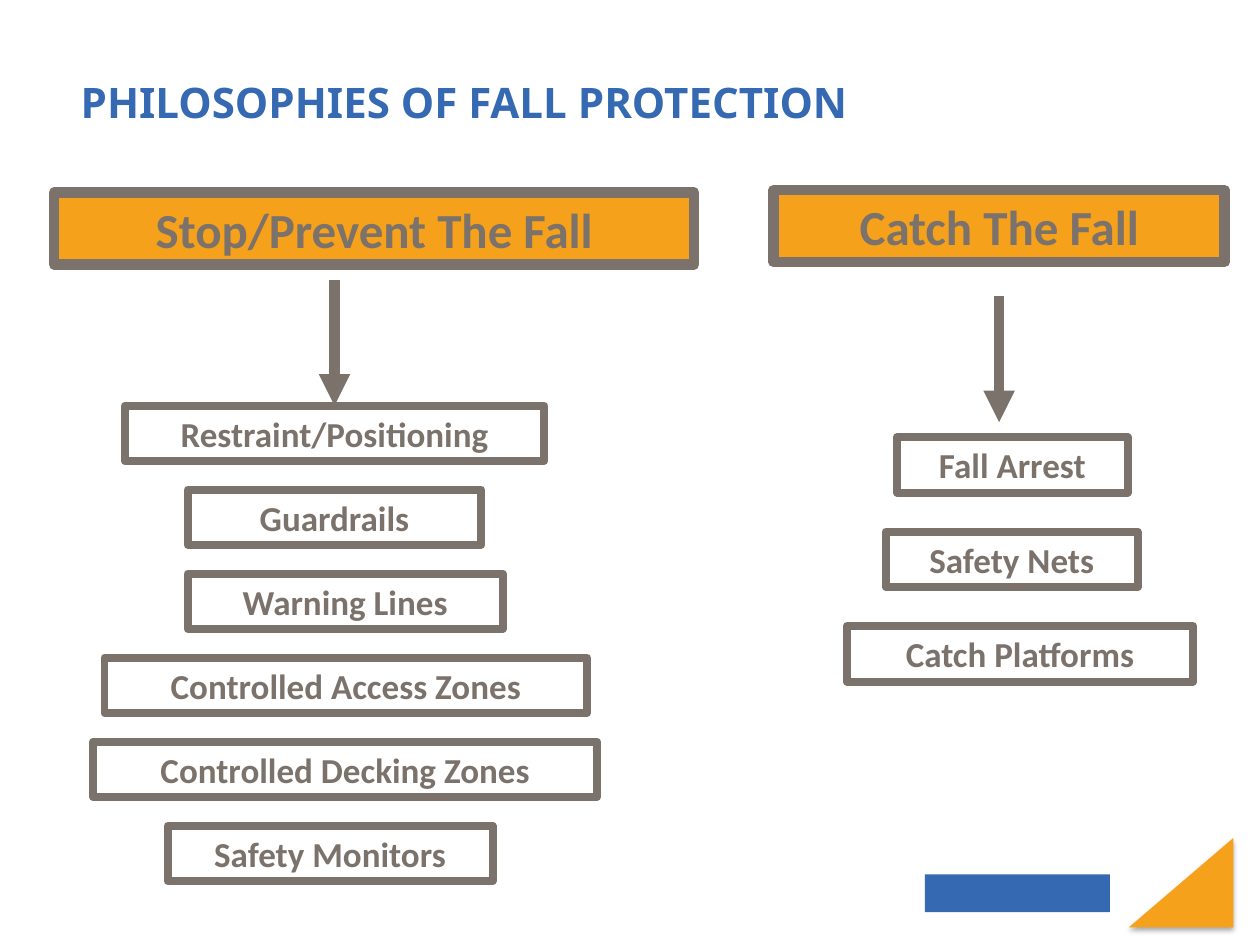
import pptx
import pptx.dml.color
import pptx.enum.shapes
import pptx.enum.text
import pptx.oxml
import pptx.oxml.ns
import pptx.util
from pptx.util import Inches

BLUE, ORANGE, GREY, WHITE = "3569B2", "F6A11C", "7B726B", "FFFFFF"
SHAPE = pptx.enum.shapes.MSO_SHAPE
ALIGN = pptx.enum.text.PP_ALIGN
ANCHOR = pptx.enum.text.MSO_ANCHOR
NS = pptx.oxml.ns.nsdecls("a")
SHADOW = (f'<a:effectLst {NS}><a:outerShdw blurRad="39370" dist="22860" dir="5400000" '
          'rotWithShape="0"><a:srgbClr val="000000"><a:alpha val="35000"/></a:srgbClr>'
          '</a:outerShdw></a:effectLst>')


def rgb(value):
    return pptx.dml.color.RGBColor.from_string(value)


class FallProtectionSlide:
    """Holds the style and the current slide, and adds each kind of element."""

    def __init__(self, prs):
        self.s = prs.slides.add_slide(prs.slide_layouts[5])
        self.item = {"name": "Calibri", "size": pptx.util.Pt(20), "bold": True}
        self.heading = {**self.item, "size": pptx.util.Pt(28)}
        self.title_font = {"name": "Noto Sans", "size": pptx.util.Pt(24), "bold": True}

    def set_text(self, sp, text, font, color, align):
        tf = sp.text_frame
        tf.word_wrap = True
        tf.vertical_anchor = ANCHOR.MIDDLE
        p = tf.paragraphs[0]
        p.alignment = align
        r = p.add_run()
        r.text = text
        for key, value in font.items():
            setattr(r.font, key, value)
        r.font.color.rgb = rgb(color)

    def title(self, text, x, y, w, h):
        sp = self.s.shapes.title
        place = {"left": x, "top": y, "width": w, "height": h}
        for key, value in place.items():
            setattr(sp, key, Inches(value))
        self.set_text(sp, text, self.title_font, BLUE, ALIGN.LEFT)

    def plain(self, kind, x, y, w, h, fill):
        sp = self.s.shapes.add_shape(kind, Inches(x), Inches(y), Inches(w), Inches(h))
        sp.shadow.inherit = False
        sp.fill.solid()
        sp.fill.fore_color.rgb = rgb(fill)
        sp.line.fill.background()
        return sp

    def corner(self, x, y, w, h):
        sp = self.plain(SHAPE.RIGHT_TRIANGLE, x, y, w, h, ORANGE)
        sp.rotation = 270
        props = sp.element.spPr
        props.remove(props.find(pptx.oxml.ns.qn("a:effectLst")))
        props.append(pptx.oxml.parse_xml(SHADOW))

    def box(self, text, x, y, w, h, fill, font, border):
        sp = self.plain(SHAPE.RECTANGLE, x, y, w, h, fill)
        sp.line.color.rgb = rgb(GREY)
        sp.line.width = pptx.util.Pt(border)
        self.set_text(sp, text, font, GREY, ALIGN.CENTER)
        return sp

    def heading_box(self, text, x, y, w):
        return self.box(text, x, y, w, 0.57, ORANGE, self.heading, 6)

    def column(self, items, top, step):
        return [self.box(text, x, top + i * step, w, 0.44, WHITE, self.item, 4.5)
                for i, (text, x, w) in enumerate(items)]

    def arrow(self, x, y, length, target=None):
        cx = self.s.shapes.add_connector(
            pptx.enum.shapes.MSO_CONNECTOR.STRAIGHT,
            Inches(x), Inches(y), Inches(x), Inches(y + length))
        cx.line.color.rgb = rgb(GREY)
        cx.line.width = pptx.util.Pt(6)
        props = cx._element.spPr
        props.find(pptx.oxml.ns.qn("a:ln")).append(
            pptx.oxml.parse_xml(f'<a:tailEnd {NS} type="triangle"/>'))
        props.append(pptx.oxml.parse_xml(f"<a:effectLst {NS}/>"))
        if target is not None:
            cx.end_connect(target, 0)


def main():
    prs = pptx.Presentation()
    prs.slide_width, prs.slide_height = Inches(10), Inches(7.5)
    slide = FallProtectionSlide(prs)

    slide.plain(SHAPE.RECTANGLE, 7.34, 6.94, 1.47, 0.3, BLUE)
    slide.corner(9.02, 6.59, 0.71, 0.83)
    slide.title("PHILOSOPHIES OF FALL PROTECTION", 0.54, 0.18, 9.11, 1.25)

    slide.heading_box("Stop/Prevent The Fall", 0.43, 1.53, 5.08)
    prevent = slide.column([
        ("Restraint/Positioning", 0.99, 3.33),
        ("Guardrails", 1.49, 2.33),
        ("Warning Lines", 1.49, 2.5),
        ("Controlled Access Zones", 0.83, 3.83),
        ("Controlled Decking Zones", 0.74, 4),
        ("Safety Monitors", 1.33, 2.58),
    ], 3.22, 2 / 3)
    slide.arrow(0.99 + 3.33 / 2, 2.22, 1, prevent[0])

    slide.heading_box("Catch The Fall", 6.14, 1.51, 3.58)
    slide.column([
        ("Fall Arrest", 7.12, 1.83),
        ("Safety Nets", 7.03, 2),
        ("Catch Platforms", 6.72, 2.75),
    ], 3.47, 0.75)
    slide.arrow(7.93, 2.35, 1)

    prs.save("out.pptx")


if __name__ == "__main__":
    main()
